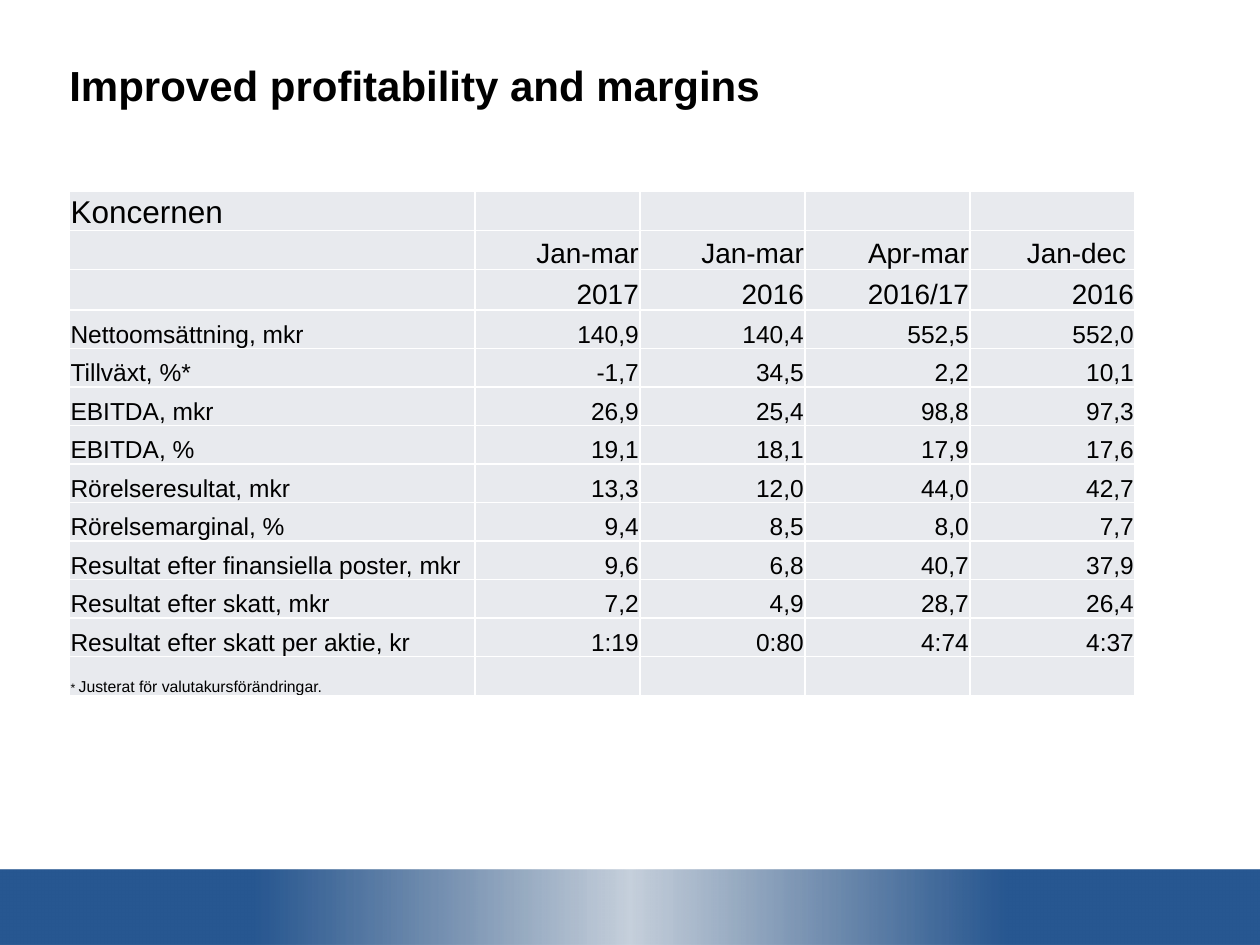
from lxml.etree import SubElement
from pptx import Presentation
from pptx.dml.color import RGBColor
from pptx.enum.shapes import MSO_SHAPE as Shape
from pptx.enum.text import MSO_ANCHOR as Anchor, PP_ALIGN as Align
from pptx.oxml.ns import qn
from pptx.util import Inches, Pt

BLACK = RGBColor(0, 0, 0)
WHITE = RGBColor(255, 255, 255)
CELL_GREY = RGBColor(0xE8, 0xEA, 0xEE)
BAND_BLUE = RGBColor(0x27, 0x57, 0x91)
BAND_MIDDLE = RGBColor(0x1F, 0x46, 0x74)
COLUMNS, ROWS = 100, 75

FIGURES = [
    ("Koncernen", "", "", "", ""),
    ("", "Jan-mar", "Jan-mar", "Apr-mar", "Jan-dec "),
    ("", "2017", "2016", "2016/17", "2016"),
    ("Nettoomsättning, mkr", "140,9", "140,4", "552,5", "552,0"),
    ("Tillväxt, %*", "-1,7", "34,5", "2,2", "10,1"),
    ("EBITDA, mkr", "26,9", "25,4", "98,8", "97,3"),
    ("EBITDA, %", "19,1", "18,1", "17,9", "17,6"),
    ("Rörelseresultat, mkr", "13,3", "12,0", "44,0", "42,7"),
    ("Rörelsemarginal, %", "9,4", "8,5", "8,0", "7,7"),
    ("Resultat efter finansiella poster, mkr", "9,6", "6,8", "40,7", "37,9"),
    ("Resultat efter skatt, mkr", "7,2", "4,9", "28,7", "26,4"),
    ("Resultat efter skatt per aktie, kr", "1:19", "0:80", "4:74", "4:37"),
    ("", "", "", "", ""),
]
FOOTNOTE = [("* ", 7), ("Justerat för valutakursförändringar.", 9)]
HEADING_SIZES = [18, 16, 16]
BODY_SIZE = 14


class Deck:
    font = "Arial"

    def __init__(self):
        self.presentation = Presentation()
        self.presentation.slide_width = Inches(10)
        self.presentation.slide_height = Inches(7.5)
        self.slide = self.presentation.slides.add_slide(self.presentation.slide_layouts[6])

    def x(self, columns):
        return round(self.presentation.slide_width * columns / COLUMNS)

    def y(self, rows):
        return round(self.presentation.slide_height * rows / ROWS)

    def area(self, left, top, width, height):
        return self.x(left), self.y(top), self.x(width), self.y(height)

    def style(self, run, size, bold=False):
        run.font.name = self.font
        run.font.size = Pt(size)
        run.font.bold = bold
        run.font.color.rgb = BLACK

    def band(self, area, stops):
        band = self.slide.shapes.add_shape(Shape.RECTANGLE, *self.area(*area))
        band.shadow.inherit = False
        band.line.fill.background()
        band.fill.gradient()
        band.fill.gradient_angle = 0
        stop_list = band.fill._fill._gradFill.find(qn("a:gsLst"))
        stop_list.clear()
        for position, color, opacity in stops:
            stop = SubElement(stop_list, qn("a:gs"), pos=str(position * 1000))
            tint = SubElement(stop, qn("a:srgbClr"), val=str(color))
            if opacity < 100:
                SubElement(tint, qn("a:alpha"), val=str(opacity * 1000))

    def title(self, area, text, size):
        frame = self.slide.shapes.add_textbox(*self.area(*area)).text_frame
        frame.word_wrap = True
        frame.margin_left = frame.margin_right = frame.margin_top = frame.margin_bottom = 0
        frame.text = text
        frame.paragraphs[0].line_spacing = 0.9
        self.style(frame.paragraphs[0].runs[0], size, bold=True)

    def table(self, area, figures, label_width, year_height):
        row_count, column_count = len(figures), len(figures[0])
        table = self.slide.shapes.add_table(row_count, column_count, *self.area(*area)).table
        table.first_row = table.horz_banding = False
        for index, column in enumerate(table.columns):
            value_width = (area[2] - label_width) / (column_count - 1)
            column.width = self.x(value_width if index else label_width)
        for index, row in enumerate(table.rows):
            row_height = (area[3] - year_height) / (row_count - 1)
            row.height = self.y(year_height if index == 2 else row_height)
        for row, texts in enumerate(figures):
            size = HEADING_SIZES[row] if row < len(HEADING_SIZES) else BODY_SIZE
            for column, text in enumerate(texts):
                self.cell(table.cell(row, column), text, size, Align.RIGHT if column else Align.LEFT)
        return table

    def cell(self, cell, text, size, align):
        cell.margin_left = cell.margin_right = cell.margin_top = Inches(0.01)
        cell.margin_bottom = 0
        cell.vertical_anchor = Anchor.BOTTOM
        paragraph = cell.text_frame.paragraphs[0]
        paragraph.alignment = align
        if text:
            paragraph.text = text
            self.style(paragraph.runs[0], size)
        properties = cell._tc.get_or_add_tcPr()
        for side in ("a:lnL", "a:lnR", "a:lnT", "a:lnB"):
            border = SubElement(properties, qn(side), w=str(Pt(1)))
            SubElement(SubElement(border, qn("a:solidFill")), qn("a:srgbClr"), val=str(WHITE))
        cell.fill.solid()
        cell.fill.fore_color.rgb = CELL_GREY

    def footnote(self, cell, parts):
        for text, size in parts:
            run = cell.text_frame.paragraphs[0].add_run()
            run.text = text
            self.style(run, size)


def main():
    deck = Deck()
    deck.band((0, 69, COLUMNS, 6), [
        (0, BAND_BLUE, 100), (20, BAND_BLUE, 100), (50, BAND_MIDDLE, 25),
        (80, BAND_BLUE, 100), (100, BAND_BLUE, 100),
    ])
    deck.title((5.5, 5.2, 88.9, 6.3), "Improved profitability and margins", 24)
    results = deck.table((5.5, 15.2, 84.6, 39.9), FIGURES, label_width=32.2, year_height=3.2)
    deck.footnote(results.cell(len(FIGURES) - 1, 0), FOOTNOTE)
    deck.presentation.save("out.pptx")


if __name__ == "__main__":
    main()
